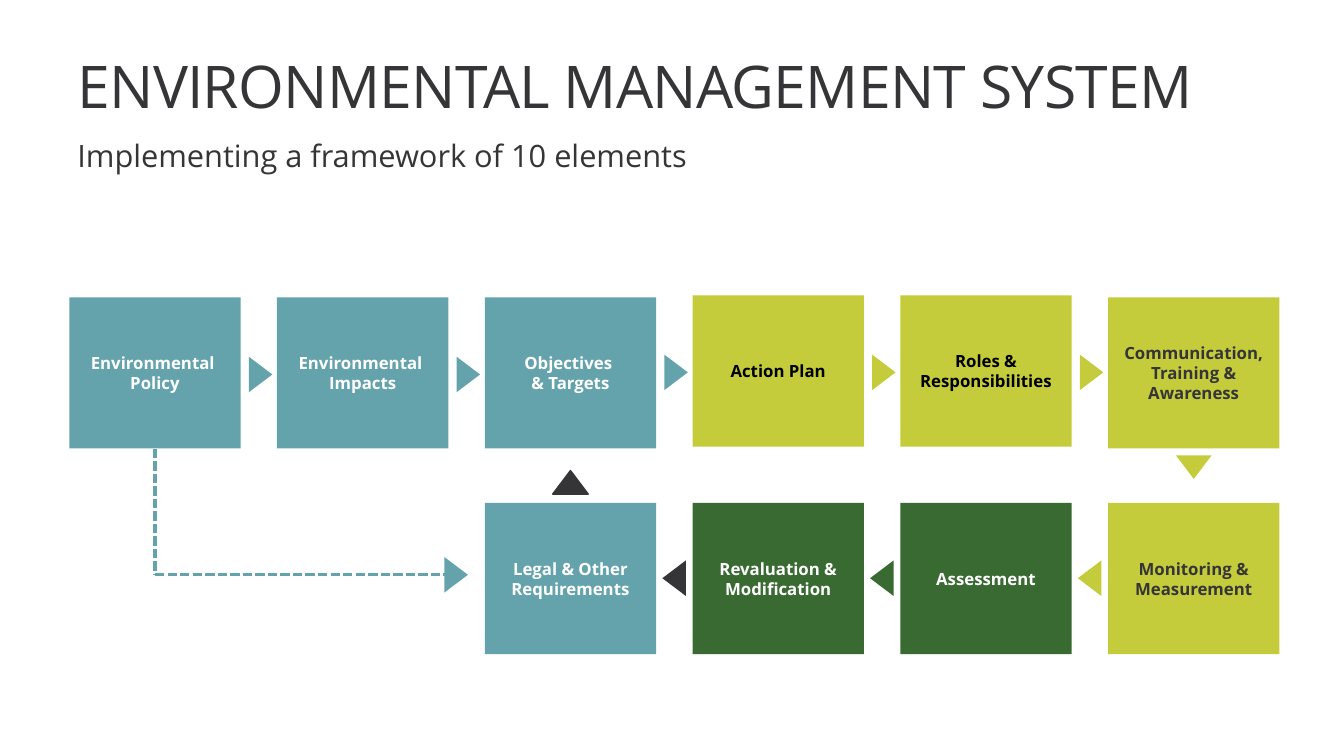
from lxml import etree
from pptx import Presentation
from pptx import util as u
from pptx.dml.color import RGBColor
from pptx.enum import dml, shapes, text
from pptx.oxml.ns import qn

THEME = {
    "font": "Open Sans",
    "teal": RGBColor.from_string("64A3AC"),
    "lime": RGBColor.from_string("C4CC3C"),
    "green": RGBColor.from_string("396A32"),
    "dark": RGBColor.from_string("353537"),
    "white": RGBColor.from_string("FFFFFF"),
    "black": RGBColor.from_string("000000"),
    "title": 42, "subtitle": 22, "label": 12,
}

TITLE = "ENVIRONMENTAL MANAGEMENT SYSTEM"
SUBTITLE = "Implementing a framework of 10 elements"

# label, fill, ink, top
TOP_ROW = [
    ("Environmental \vPolicy", "teal", "white", 212.4),
    ("Environmental \vImpacts", "teal", "white", 212.4),
    ("Objectives \v& Targets", "teal", "white", 212.4),
    ("Action Plan", "lime", "black", 211),
    ("Roles & Responsibilities", "lime", "black", 211),
    ("Communication, Training & Awareness", "lime", "dark", 212.4),
]
BOTTOM_ROW = [
    ("Legal & Other Requirements", "teal", "white", 359.3),
    ("Revaluation & Modification", "green", "white", 359.3),
    ("Assessment", "green", "white", 359.3),
    ("Monitoring & Measurement", "lime", "dark", 359.3),
]
TOP_ARROWS = [("teal", 267.5), ("teal", 267.5), ("teal", 266), ("lime", 266), ("lime", 266)]
BOTTOM_ARROWS = ["dark", "green", "lime"]

LEFT, PITCH, BOX_W, BOX_H = 49.5, 148.4, 122.4, 108
ARROW_W, ARROW_H = 25.4, 16.8
FIRST_BOTTOM_COLUMN = 2
BOTTOM_ARROW_Y = 413
FEED_X, FEED_Y, FEED_END = 325.8, 410.6, 318.2


def column_left(column):
    return LEFT + PITCH * column


def column_center(column):
    return column_left(column) + BOX_W / 2


def apply(target, values):
    for name, value in values.items():
        setattr(target, name, value)


def set_font(paragraph, size, ink, bold=False):
    apply(paragraph.font, {"name": THEME["font"], "size": u.Pt(THEME[size]), "bold": bold})
    paragraph.font.color.rgb = THEME[ink]


def add_filled(slide, kind, left, top, width, height, fill):
    shape = slide.shapes.add_shape(kind, u.Pt(left), u.Pt(top), u.Pt(width), u.Pt(height))
    shape.shadow.inherit = False
    shape.fill.solid()
    shape.fill.fore_color.rgb = THEME[fill]
    shape.line.fill.background()
    return shape


def add_box(slide, column, label, fill, ink, top):
    shape = add_filled(slide, shapes.MSO_SHAPE.RECTANGLE, column_left(column), top, BOX_W, BOX_H, fill)
    apply(shape.text_frame, {"word_wrap": True, "vertical_anchor": text.MSO_ANCHOR.MIDDLE})
    paragraph = shape.text_frame.paragraphs[0]
    paragraph.text = label
    paragraph.alignment = text.PP_ALIGN.CENTER
    for run in paragraph.runs:
        set_font(run, "label", ink, True)
    return shape


def add_arrow(slide, center_x, center_y, rotation, fill):
    arrow = add_filled(slide, shapes.MSO_SHAPE.ISOSCELES_TRIANGLE, center_x - ARROW_W / 2,
                       center_y - ARROW_H / 2, ARROW_W, ARROW_H, fill)
    arrow.rotation = rotation
    return arrow


def add_heading(slide, wording, size, left, top, width, height):
    box = slide.shapes.add_textbox(u.Pt(left), u.Pt(top), u.Pt(width), u.Pt(height))
    apply(box.text_frame, {"word_wrap": True, "margin_left": u.Pt(5.6), "margin_top": 0})
    paragraph = box.text_frame.paragraphs[0]
    run = paragraph.add_run()
    run.text = wording
    set_font(run, size, "dark")
    return paragraph


def add_dashes(slide, start, end):
    line = slide.shapes.add_connector(shapes.MSO_CONNECTOR.STRAIGHT, *(u.Pt(v) for v in start + end))
    apply(line.line, {"width": u.Pt(2.25), "dash_style": dml.MSO_LINE.SQUARE_DOT})
    line.line.color.rgb = THEME["teal"]
    etree.SubElement(line._element.spPr, qn("a:effectLst"))
    return line


def main():
    presentation = Presentation()
    apply(presentation, {"slide_width": u.Pt(960), "slide_height": u.Pt(540)})
    slide = presentation.slides.add_slide(presentation.slide_layouts[6])

    title = add_heading(slide, TITLE, "title", 49.7, 39.2, 885, 56)
    title.line_spacing = 0.95
    title.runs[0].font._element.set("spc", "-50")
    add_heading(slide, SUBTITLE, "subtitle", 49.7, 97.6, 476, 78)

    top_boxes = [add_box(slide, column, *row) for column, row in enumerate(TOP_ROW)]
    for column, row in enumerate(BOTTOM_ROW, FIRST_BOTTOM_COLUMN):
        add_box(slide, column, *row)

    for column, (fill, y) in enumerate(TOP_ARROWS):
        add_arrow(slide, column_left(column) + 136.6, y, 90, fill)
    for column, fill in enumerate(BOTTOM_ARROWS, FIRST_BOTTOM_COLUMN):
        add_arrow(slide, column_left(column) + 135.2, BOTTOM_ARROW_Y, 270, fill)
    add_arrow(slide, column_center(5), 333.7, 180, "lime")
    add_arrow(slide, FEED_X, FEED_Y, 90, "teal")

    policy_x = column_center(0)
    down = add_dashes(slide, (policy_x, 320.4), (policy_x, FEED_Y))
    down.begin_connect(top_boxes[0], 2)
    add_dashes(slide, (policy_x, FEED_Y), (FEED_END, FEED_Y))

    return_arrow = add_arrow(slide, column_center(2), 344.5, 0, "dark")
    return_arrow.line.color.rgb = THEME["dark"]
    return_arrow.line.width = u.Pt(1)

    presentation.save("out.pptx")


if __name__ == "__main__":
    main()
